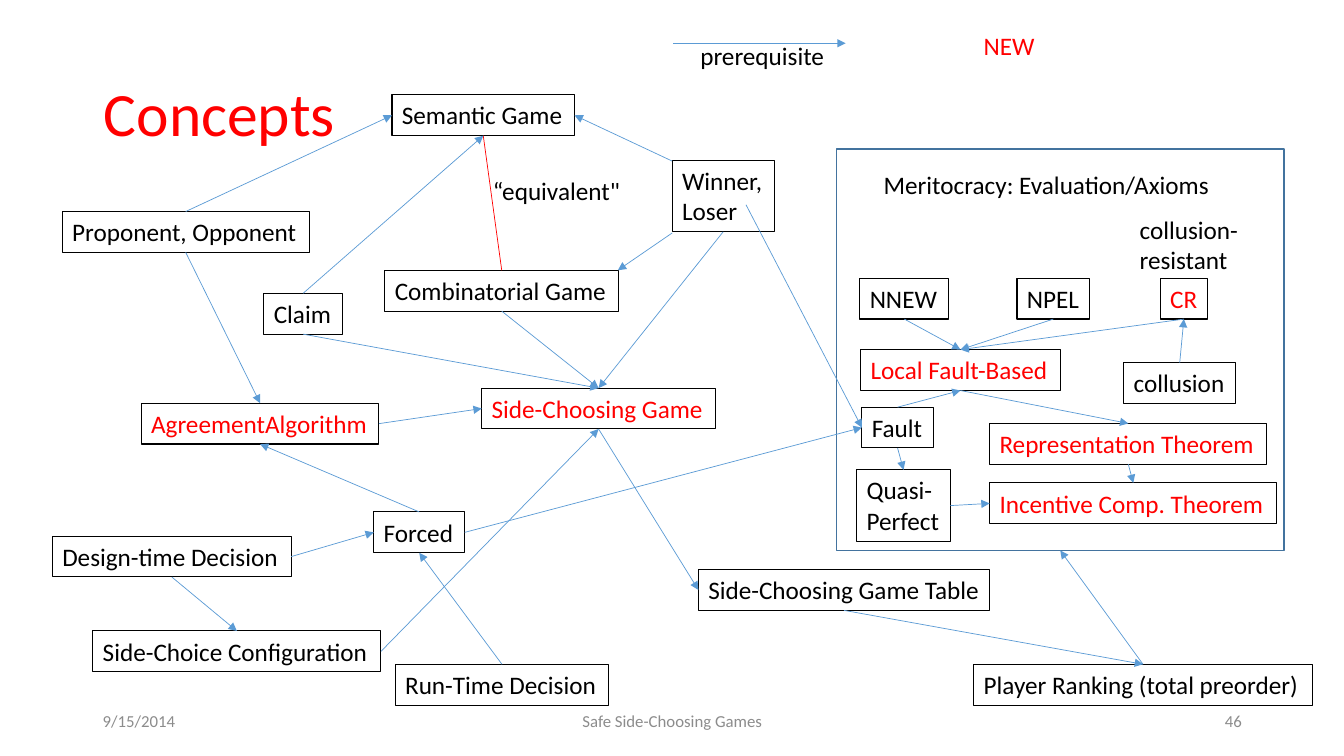
from dataclasses import dataclass

from lxml.etree import SubElement as Sub
from pptx import Presentation as Deck
from pptx.dml.color import RGBColor as Rgb
from pptx.enum.shapes import MSO_CONNECTOR as Wire, MSO_SHAPE as Form
from pptx.enum.text import MSO_ANCHOR as Anchor, MSO_AUTO_SIZE as Fit, PP_ALIGN as Align
from pptx.oxml.ns import qn
from pptx.util import Cm, Pt


@dataclass(frozen=True)
class Theme:
    font: str = "Calibri"
    ink: str = "000000"
    hot: str = "FF0000"
    link: str = "5B9BD5"
    frame: str = "43739E"
    mute: str = "8C8C8C"
    head: float = 44
    body: float = 18
    foot: float = 12
    thin: float = 0.5
    edge: float = 0.75
    bold: float = 1
    row: float = 1.03
    pair: float = 1.8


@dataclass(frozen=True)
class Box:
    text: str
    left: float
    top: float
    width: float
    color: str = Theme.ink


@dataclass(frozen=True)
class End:
    key: str
    side: int


@dataclass(frozen=True)
class Point:
    x: float
    y: float


@dataclass(frozen=True)
class Link:
    start: End | Point
    stop: End | Point
    color: str = Theme.link
    arrow: bool = True


@dataclass(frozen=True)
class Foot:
    text: str
    left: float
    width: float
    align: Align


THEME = Theme()
HOT = THEME.hot
TOP, LEFT, BASE, RIGHT = range(4)

BOXES = {
    "sem": Box("Semantic Game", 9.88, 2.39, 4.6),
    "comb": Box("Combinatorial Game", 9.7, 6.81, 5.89),
    "agree": Box("AgreementAlgorithm", 3.56, 10.16, 5.99, HOT),
    "game": Box("Side-Choosing Game", 12.14, 9.78, 5.89, HOT),
    "plan": Box("Design-time Decision", 1.32, 13.51, 6.02),
    "nnew": Box("NNEW", 21.67, 7.01, 2.24),
    "npel": Box("NPEL", 25.63, 7.01, 1.83),
    "cr": Box("CR", 29.24, 7.01, 1.19, HOT),
    "local": Box("Local Fault-Based", 21.69, 8.81, 5.03, HOT),
    "table": Box("Side-Choosing Game Table", 17.6, 14.35, 7.34),
    "forced": Box("Forced", 9.42, 12.9, 2.29),
    "run": Box("Run-Time Decision", 9.96, 16.74, 5.38),
    "rank": Box("Player Ranking (total preorder)", 24.54, 16.74, 8.53),
    "sides": Box("Proponent, Opponent", 1.57, 5.33, 6.22),
    "plot": Box("collusion", 28.32, 9.14, 2.82),
    "win": Box("Winner,\nLoser", 16.94, 4.04, 2.57),
    "fault": Box("Fault", 21.72, 10.26, 1.8),
    "claim": Box("Claim", 6.65, 7.39, 1.98),
    "rep": Box("Representation Theorem", 24.94, 10.67, 6.99, HOT),
    "choice": Box("Side-Choice Configuration", 2.34, 15.9, 7.26),
    "quasi": Box("Quasi-\nPerfect", 21.59, 11.84, 2.36),
    "comp": Box("Incentive Comp. Theorem", 24.94, 12.17, 7.24, HOT),
}

LABELS = [
    Box("Meritocracy: Evaluation/Axioms", 22.02, 4.14, 8.79),
    Box("prerequisite", 17.4, 0.89, 3.66),
    Box("NEW", 24.54, 0.64, 1.8, HOT),
    Box("“equivalent\"", 12.17, 4.29, 3.76),
    Box("collusion-\nresistant", 28.47, 5.28, 3.02),
]

LINKS = [
    Link(End("agree", RIGHT), End("game", LEFT)),
    Link(End("comb", BASE), End("game", TOP)),
    Link(End("plan", RIGHT), End("forced", LEFT)),
    Link(End("forced", TOP), End("agree", BASE)),
    Link(End("comb", TOP), End("sem", BASE), HOT, False),
    Link(End("nnew", BASE), End("local", TOP)),
    Link(End("npel", BASE), End("local", TOP)),
    Link(End("cr", BASE), End("local", TOP)),
    Link(End("game", BASE), End("table", LEFT)),
    Link(End("table", BASE), End("rank", TOP)),
    Link(Point(16.97, 1.09), Point(21.31, 1.09)),
    Link(End("run", TOP), End("forced", BASE)),
    Link(End("rank", TOP), End("merit", BASE)),
    Link(End("sides", TOP), End("sem", LEFT)),
    Link(End("sides", BASE), End("agree", TOP)),
    Link(End("plot", TOP), End("cr", BASE)),
    Link(Point(16.94, 4.06), End("sem", RIGHT)),
    Link(Point(16.94, 5.87), Point(15.57, 6.81)),
    Link(End("win", BASE), End("game", TOP)),
    Link(Point(18.8, 5.16), End("fault", LEFT)),
    Link(End("fault", TOP), End("local", BASE)),
    Link(End("forced", RIGHT), End("fault", LEFT)),
    Link(End("claim", TOP), End("sem", BASE)),
    Link(End("claim", BASE), End("game", TOP)),
    Link(End("local", BASE), End("rep", TOP)),
    Link(End("plan", BASE), End("choice", TOP)),
    Link(End("choice", RIGHT), End("game", BASE)),
    Link(End("quasi", RIGHT), End("comp", LEFT)),
    Link(End("fault", BASE), End("quasi", TOP)),
    Link(End("rep", BASE), End("comp", TOP)),
]

FEET = [
    Foot("9/15/2014", 2.34, 7.62, Align.LEFT),
    Foot("Safe Side-Choosing Games", 11.23, 11.43, Align.CENTER),
    Foot("46", 23.93, 7.62, Align.RIGHT),
]


def write(shape, text: str, size: float, color: str, align=Align.LEFT) -> None:
    shape.text_frame.text = text
    for para in shape.text_frame.paragraphs:
        para.alignment = align
        para.font.name = THEME.font
        para.font.size = Pt(size)
        para.font.color.rgb = Rgb.from_string(color)


def outline(shape, color: str, width: float) -> None:
    shape.shadow.inherit = False
    shape.fill.background()
    shape.line.color.rgb = Rgb.from_string(color)
    shape.line.width = Pt(width)


def draw_box(shapes, box: Box, edged: bool):
    tall = THEME.pair if "\n" in box.text else THEME.row
    area = [Cm(n) for n in (box.left, box.top, box.width, tall)]
    if edged:
        shape = shapes.add_shape(Form.RECTANGLE, *area)
        outline(shape, THEME.ink, THEME.edge)
    else:
        shape = shapes.add_textbox(*area)
    write(shape, box.text, THEME.body, box.color)
    frame = shape.text_frame
    frame.word_wrap = False
    frame.auto_size = Fit.SHAPE_TO_FIT_TEXT
    frame.vertical_anchor = Anchor.TOP
    return shape


def draw_link(shapes, link: Link, nodes: dict) -> None:
    line = shapes.add_connector(Wire.STRAIGHT, 0, 0, 0, 0)
    if isinstance(link.start, End):
        line.begin_connect(nodes[link.start.key], link.start.side)
    else:
        line.begin_x, line.begin_y = Cm(link.start.x), Cm(link.start.y)
    if isinstance(link.stop, End):
        line.end_connect(nodes[link.stop.key], link.stop.side)
    else:
        line.end_x, line.end_y = Cm(link.stop.x), Cm(link.stop.y)
    line.line.color.rgb = Rgb.from_string(link.color)
    line.line.width = Pt(THEME.thin)
    props = line._element.spPr
    if link.arrow:
        Sub(props.find(qn("a:ln")), qn("a:tailEnd"), type="triangle")
    Sub(props, qn("a:effectLst"))


def main() -> None:
    deck = Deck()
    deck.slide_width, deck.slide_height = Cm(33.87), Cm(19.05)
    slide = deck.slides.add_slide(deck.slide_layouts[5])
    shapes = slide.shapes
    title = shapes.title
    title.left, title.top, title.width, title.height = map(Cm, (2.36, 1.09, 29.21, 3.68))
    write(title, "Concepts", THEME.head, HOT)
    title.text_frame.vertical_anchor = Anchor.MIDDLE
    title.text_frame.paragraphs[0].line_spacing = 0.9

    merit = shapes.add_shape(Form.RECTANGLE, *map(Cm, (21.08, 3.76, 11.28, 10.11)))
    outline(merit, THEME.frame, THEME.bold)
    nodes = {key: draw_box(shapes, box, True) for key, box in BOXES.items()}
    nodes["merit"] = merit
    for label in LABELS:
        draw_box(shapes, label, False)
    for link in LINKS:
        draw_link(shapes, link, nodes)
    for foot in FEET:
        note = shapes.add_textbox(Cm(foot.left), Cm(17.65), Cm(foot.width), Cm(1.01))
        write(note, foot.text, THEME.foot, THEME.mute, foot.align)
        note.text_frame.word_wrap = True
        note.text_frame.vertical_anchor = Anchor.MIDDLE
    deck.save("out.pptx")


if __name__ == "__main__":
    main()
